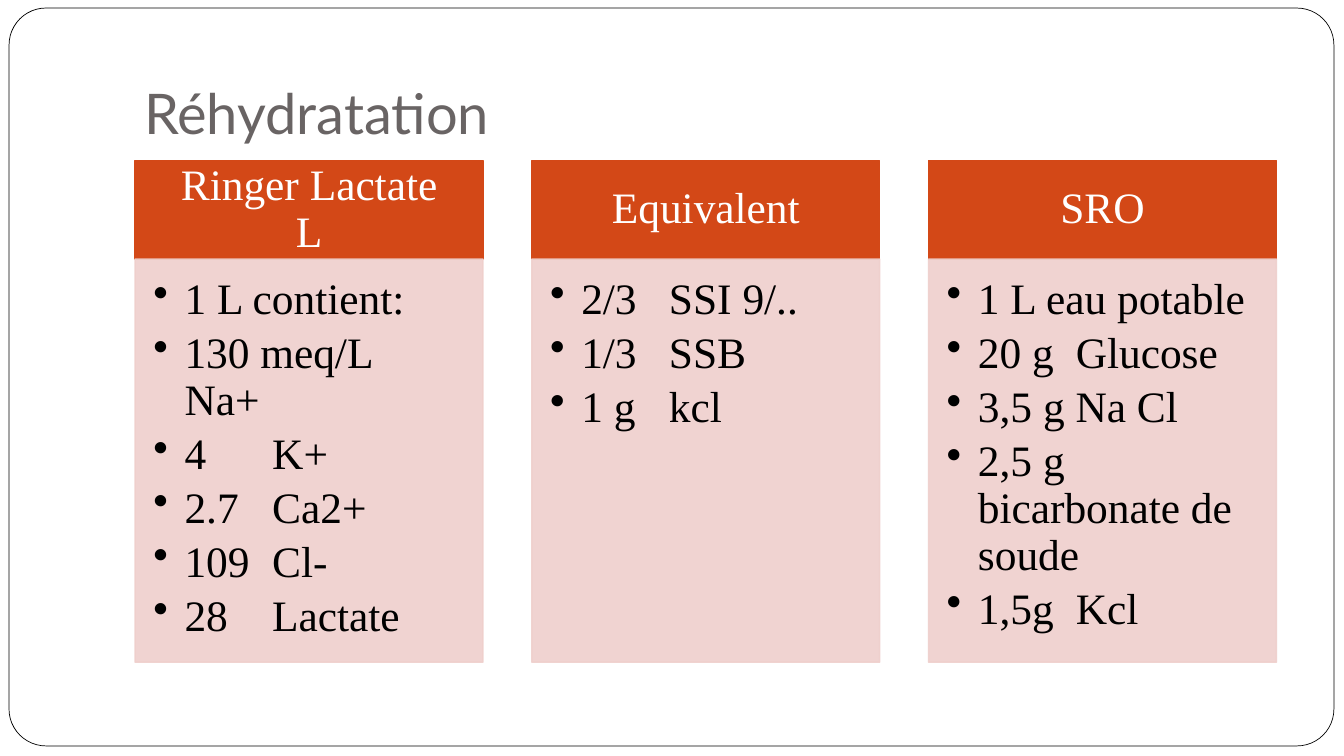
from lxml.etree import SubElement
from pptx import Presentation
from pptx.dml.color import RGBColor
from pptx.enum.shapes import MSO_SHAPE
from pptx.enum.text import MSO_ANCHOR, MSO_AUTO_SIZE, PP_ALIGN
from pptx.oxml.ns import qn
from pptx.util import Inches, Pt

COLORS = {"header": "D34817", "panel": "EFCFCC", "title": "696464",
          "white": "FFFFFF", "black": "000000"}
SLIDE_W, SLIDE_H = 13.33, 7.5
GRID_LEFT, GRID_TOP, GRID_W = 1.34, 1.59, 11.32
CARD_W, HEADER_H, LIST_H = 3.45, 0.98, 4
INDENT = 0.31

# Heading, tab stop after the bullet text starts, and list items;
# a pair is an amount and a substance
CARDS = [
    ("Ringer Lactate L", 0.87,
     ["1 L contient:", "130 meq/L Na+", ("4", "K+"), ("2.7", "Ca2+"),
      ("109", "Cl-"), ("28", "Lactate")]),
    ("Equivalent", 0.87, [("2/3", "SSI 9/.."), ("1/3", "SSB"), ("1 g", "kcl")]),
    ("SRO", 0.97,
     ["1 L eau potable", ("20 g", "Glucose"), "3,5 g Na Cl",
      "2,5 g bicarbonate de soude", ("1,5g", "Kcl")]),
]


def rgb(name):
    return RGBColor.from_string(COLORS[name])


def add_box(s, kind, box, fill, line, width):
    sp = s.shapes.add_shape(kind, *(Inches(v) for v in box))
    sp.shadow.inherit = False
    sp.fill.solid()
    sp.fill.fore_color.rgb = rgb(fill)
    sp.line.color.rgb = rgb(line)
    sp.line.width = Pt(width)
    return sp


def set_frame(tf, anchor, insets):
    tf.word_wrap = True
    tf.auto_size = MSO_AUTO_SIZE.NONE
    tf.vertical_anchor = anchor
    (tf.margin_left, tf.margin_top,
     tf.margin_right, tf.margin_bottom) = (Inches(v) for v in insets)


def add_run(p, text, size, font, color):
    r = p.add_run()
    r.text = text
    r.font.size = Pt(size)
    r.font.name = font
    r.font.color.rgb = rgb(color)


def add_bullet(p, tab):
    pPr = p._p.get_or_add_pPr()
    pPr.set("marL", str(Inches(INDENT)))
    pPr.set("indent", str(-Inches(INDENT)))
    SubElement(pPr, qn("a:buChar"), char="•")
    tabs = SubElement(pPr, qn("a:tabLst"))
    SubElement(tabs, qn("a:tab"), pos=str(Inches(INDENT + tab)), algn="l")


def set_alpha(color_format_parent, percent):
    for clr in color_format_parent.iter(qn("a:srgbClr")):
        SubElement(clr, qn("a:alpha"), val=str(percent * 1000))


def add_frame(s, box):
    sp = add_box(s, MSO_SHAPE.ROUNDED_RECTANGLE, box, "white", "black", 0.5)
    sp.adjustments[0] = 0.05
    # Behind the title
    sp.element.getparent().insert(2, sp.element)


def add_title(s, box):
    title = s.shapes.title
    title.left, title.top, title.width, title.height = (Inches(v) for v in box)
    tf = title.text_frame
    set_frame(tf, MSO_ANCHOR.BOTTOM, (0.1, 0.05, 0.1, 0.1))
    p = tf.paragraphs[0]
    p.alignment = PP_ALIGN.LEFT
    add_run(p, "Réhydratation", 40, "Lato", "title")


def add_card(s, left, top, heading, tab, items):
    # Heading band
    band = add_box(s, MSO_SHAPE.RECTANGLE, (left, top, CARD_W, HEADER_H),
                   "header", "header", 1)
    tf = band.text_frame
    set_frame(tf, MSO_ANCHOR.MIDDLE, (0.28, 0.14, 0.28, 0.14))
    p = tf.paragraphs[0]
    p.alignment = PP_ALIGN.CENTER
    p.line_spacing = 0.9
    add_run(p, heading, 31, "Times New Roman", "white")

    # Bulleted list
    panel = add_box(s, MSO_SHAPE.RECTANGLE, (left, top + HEADER_H, CARD_W, LIST_H),
                    "panel", "panel", 1)
    set_alpha(panel.element.spPr, 90)
    tf = panel.text_frame
    set_frame(tf, MSO_ANCHOR.TOP, (0.18, 0.18, 0.28, 0.27))
    for i, item in enumerate(items):
        p = tf.add_paragraph() if i else tf.paragraphs[0]
        p.alignment = PP_ALIGN.LEFT
        p.line_spacing = 0.9
        p.space_after = Pt(5)
        add_bullet(p, tab)
        text = item if isinstance(item, str) else "\t".join(item)
        add_run(p, text, 31, "Times New Roman", "black")


def main():
    prs = Presentation()
    prs.slide_width, prs.slide_height = Inches(SLIDE_W), Inches(SLIDE_H)
    s = prs.slides.add_slide(prs.slide_layouts[5])
    add_frame(s, (0.09, 0.08, 13.14, 7.32))
    add_title(s, (1.33, 0.3, 11.33, 1.25))
    pitch = (GRID_W - CARD_W) / (len(CARDS) - 1)
    for i, (heading, tab, items) in enumerate(CARDS):
        add_card(s, GRID_LEFT + i * pitch, GRID_TOP, heading, tab, items)
    prs.save("out.pptx")


if __name__ == "__main__":
    main()
